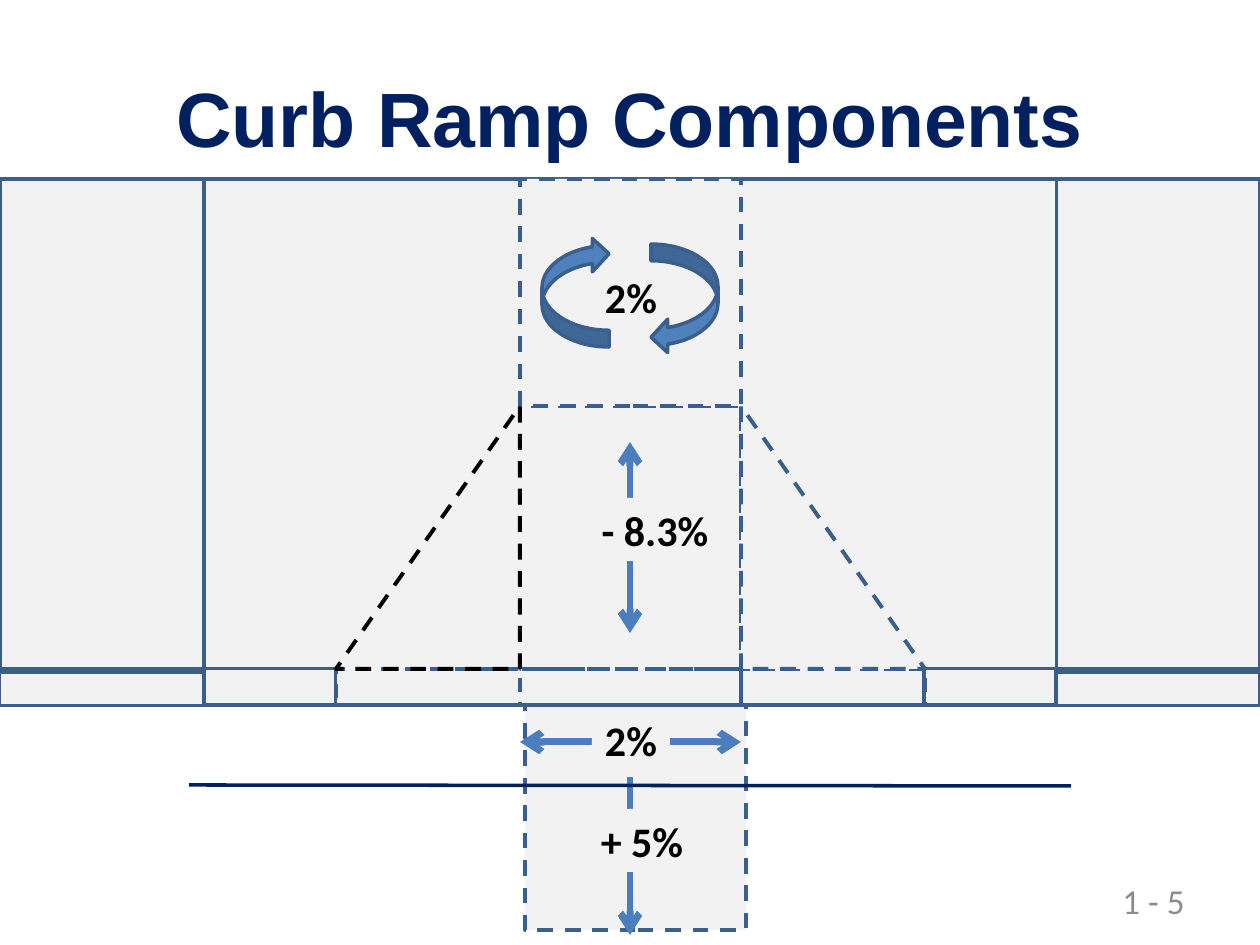
import pptx
import pptx.util
import pptx.dml.color
import pptx.enum.dml
import pptx.enum.shapes
import pptx.enum.text
import pptx.oxml.ns
import lxml.etree

RGBColor = pptx.dml.color.RGBColor
MSO = pptx.enum.shapes.MSO_SHAPE
ALIGN = pptx.enum.text.PP_ALIGN
MIDDLE = pptx.enum.text.MSO_ANCHOR.MIDDLE
DASH = pptx.enum.dml.MSO_LINE.DASH
qn = pptx.oxml.ns.qn

GREY = RGBColor(0xF2, 0xF2, 0xF2)
EDGE = RGBColor(0x3A, 0x5F, 0x8C)
BLUE = RGBColor(0x4F, 0x81, 0xBD)
ARROW = RGBColor(0x4B, 0x7E, 0xBC)
NAVY = RGBColor(0x00, 0x20, 0x60)
BLACK = RGBColor(0, 0, 0)
NUMBER = RGBColor(0x8C, 0x8C, 0x8C)
PX = 914400 / 126


def px(*values):
    return [round(v * PX) for v in values]


def write(sp, text, size, font, color, bold, align):
    tf = sp.text_frame
    tf.vertical_anchor = MIDDLE
    p = tf.paragraphs[0]
    p.alignment = align
    r = p.add_run()
    r.text = text
    r.font.size = pptx.util.Pt(size)
    r.font.name = font
    r.font.bold = bold
    r.font.color.rgb = color


prs = pptx.Presentation()
prs.slide_width, prs.slide_height = px(1260, 945)
s = prs.slides.add_slide(prs.slide_layouts[5])

title = s.shapes.title
title.left, title.top, title.width, title.height = px(63, 38, 1134, 158)
write(title, "Curb Ramp Components", 44, "Arial", NAVY, True, ALIGN.CENTER)

panels = [
    (525, 703, 221, 227, GREY, 2.25, True),
    (0, 672, 1260, 34, GREY, 1.75, False),
    (0, 179, 1260, 490, GREY, 2, False),
    (204, 179, 853, 526, GREY, 1.75, False),
    (520, 406, 221, 263, None, 2.25, True),
    (520, 179, 221, 227, GREY, 2.25, True),
    (520, 669, 221, 36, None, 2, True),
    (336, 669, 184, 36, None, 2, True),
    (741, 669, 184, 36, None, 2, True),
    (204, 669, 132, 36, None, 1.75, False),
    (924, 669, 132, 36, None, 1.75, False),
]
shapes = [(MSO.RECTANGLE, *panel, EDGE) for panel in panels]
shapes += [
    (MSO.CURVED_LEFT_ARROW, 542, 237, 67, 110, BLUE, 2, False, EDGE),
    (MSO.CURVED_LEFT_ARROW, 651, 244, 67, 110, BLUE, 2, False, EDGE),
    (MSO.RIGHT_TRIANGLE, 336, 406, 184, 263, None, 2.25, True, BLACK),
    (MSO.RIGHT_TRIANGLE, 741, 406, 184, 263, GREY, 2.25, True, EDGE),
]
for kind, x, y, w, h, fill, width, dashed, color in shapes:
    sp = s.shapes.add_shape(kind, *px(x, y, w, h))
    sp.shadow.inherit = False
    if fill is None:
        sp.fill.background()
    else:
        sp.fill.solid()
        sp.fill.fore_color.rgb = fill
    sp.line.color.rgb = color
    sp.line.width = pptx.util.Pt(width)
    if dashed:
        sp.line.dash_style = DASH
    if kind == MSO.CURVED_LEFT_ARROW and x < 630:
        sp.rotation = 180
    if kind == MSO.RIGHT_TRIANGLE and x < 630:
        sp._element.spPr.find(qn("a:xfrm")).set("flipH", "1")

lines = [
    (520, 742, 741, 742, ARROW, 4, ("headEnd", "tailEnd")),
    (630, 777, 630, 935, ARROW, 4, ("tailEnd",)),
    (189, 785, 1071, 786, NAVY, 2, ()),
    (630, 442, 630, 633, ARROW, 4, ("headEnd", "tailEnd")),
]
for x1, y1, x2, y2, color, width, ends in lines:
    line = s.shapes.add_connector(
        pptx.enum.shapes.MSO_CONNECTOR.STRAIGHT, *px(x1, y1, x2, y2))
    line.line.color.rgb = color
    line.line.width = pptx.util.Pt(width)
    ln = line.line._get_or_add_ln()
    for end in ends:
        lxml.etree.SubElement(ln, qn("a:" + end), type="arrow")
    lxml.etree.SubElement(line._element.spPr, qn("a:effectLst"))

labels = [
    ("2%", 592, 265, 78, 64, None),
    ("- 8.3%", 588, 498, 134, 63, GREY),
    ("2%", 592, 708, 78, 64, GREY),
    ("+ 5%", 588, 809, 108, 63, GREY),
]
for text, x, y, w, h, fill in labels:
    sp = s.shapes.add_textbox(*px(x, y, w, h))
    if fill is not None:
        sp.fill.solid()
        sp.fill.fore_color.rgb = fill
    sp.text_frame.word_wrap = False
    write(sp, text, 24, "Calibri", BLACK, True, ALIGN.CENTER)

sp = s.shapes.add_textbox(*px(903, 876, 294, 50))
sp.text_frame.word_wrap = True
write(sp, "1 - 5", 20, "Calibri", NUMBER, False, ALIGN.RIGHT)

prs.save("out.pptx")
